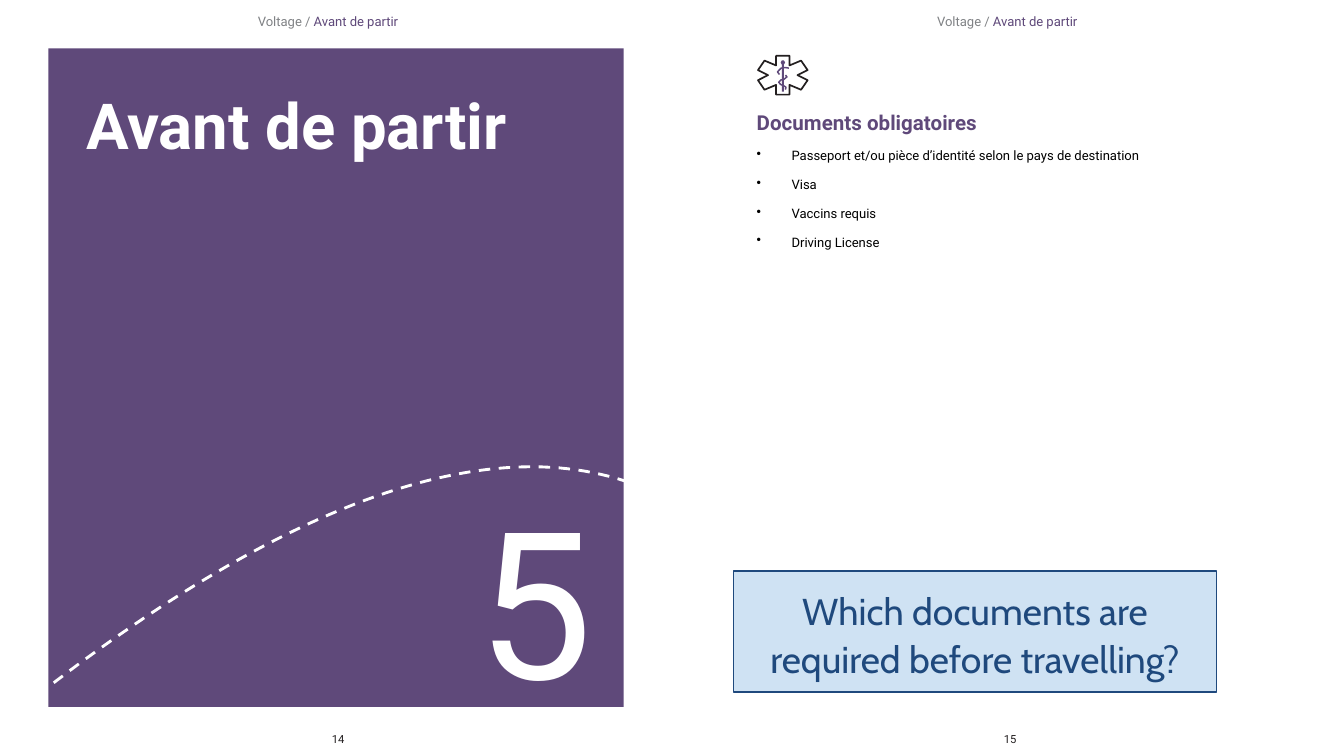
from lxml import etree
from pptx import Presentation
from pptx.dml.color import RGBColor
from pptx.enum import dml, shapes, text
from pptx.oxml.ns import qn
from pptx.util import Pt

PURPLE = RGBColor(0x5F, 0x49, 0x7A)
WHITE = RGBColor(0xFF, 0xFF, 0xFF)
BLACK = RGBColor(0x00, 0x00, 0x00)
INK = RGBColor(0x23, 0x1F, 0x20)
GREY = RGBColor(0x80, 0x82, 0x85)
NAVY = RGBColor(0x1F, 0x49, 0x7D)
PALE_BLUE = RGBColor(0xCF, 0xE2, 0xF3)

DOCUMENTS = [
    "Passeport et/ou pièce d’identité selon le pays de destination",
    "Visa",
    "Vaccins requis",
    "Driving License",
]


def style(paragraph, size, color, bold=False, name="Roboto"):
    font = paragraph.font
    font.name, font.size, font.bold = name, Pt(size), bold
    font.color.rgb = color


def add_text(page, left, top, width, height, content, size, color, bold=False, inset=0.7):
    """Add a one-paragraph text box and return its text frame."""
    box = page.shapes.add_textbox(Pt(left), Pt(top), Pt(width), Pt(height))
    frame = box.text_frame
    frame.word_wrap = True
    frame.auto_size = text.MSO_AUTO_SIZE.SHAPE_TO_FIT_TEXT
    frame.margin_left = frame.margin_right = frame.margin_bottom = 0
    frame.margin_top = Pt(inset)
    paragraph = frame.paragraphs[0]
    paragraph.text = content
    style(paragraph, size, color, bold)
    return frame


def add_bullet(frame, content):
    paragraph = frame.add_paragraph()
    paragraph.text = content
    paragraph.space_before = Pt(7)
    properties = paragraph._p.get_or_add_pPr()
    properties.set("marL", str(Pt(18.7)))
    properties.set("indent", str(-Pt(18.7)))
    bullet_color = etree.SubElement(properties, qn("a:buClr"))
    etree.SubElement(bullet_color, qn("a:srgbClr"), val=str(BLACK))
    etree.SubElement(properties, qn("a:buChar"), char="•")
    style(paragraph, 7, BLACK)


def add_outline(page, points, fill=None, line=None, width=1, closed=False):
    (start_x, start_y), *rest = [(Pt(x), Pt(y)) for x, y in points]
    builder = page.shapes.build_freeform(start_x, start_y)
    builder.add_line_segments(rest, close=closed)
    outline = builder.convert_to_shape()
    outline.shadow.inherit = False
    if fill is None:
        outline.fill.background()
    else:
        outline.fill.solid()
        outline.fill.fore_color.rgb = fill
    if line is None:
        outline.line.fill.background()
    else:
        outline.line.color.rgb = line
        outline.line.width = Pt(width)
    return outline


def quadratic_curve(start, control, end, steps=60):
    points = []
    for step in range(steps + 1):
        t = step / steps
        points.append(tuple(
            (1 - t) ** 2 * a + 2 * t * (1 - t) * b + t ** 2 * c
            for a, b, c in zip(start, control, end)))
    return points


def add_cover(page):
    cover = page.shapes.add_shape(
        shapes.MSO_SHAPE.RECTANGLE, Pt(25.9), Pt(25.9), Pt(308.2), Pt(352.8))
    cover.shadow.inherit = False
    cover.fill.solid()
    cover.fill.fore_color.rgb = PURPLE
    cover.line.fill.background()
    add_text(page, 255.6, 253.4, 63.4, 133.9, "5", 110, WHITE)
    route = add_outline(
        page, quadratic_curve((28.8, 365.8), (241.9, 203.8), (360, 268.6)),
        line=WHITE, width=1.52)
    route.line.dash_style = dml.MSO_LINE.DASH
    add_text(page, 46.1, 38.2, 234, 49, "Avant de partir", 34, WHITE, True, 7.9)


def add_header(page, left, width):
    frame = add_text(page, left, 6.5, width, 7.9, "Voltage / ", 7, GREY)
    paragraph = frame.paragraphs[0]
    paragraph.alignment = text.PP_ALIGN.CENTER
    paragraph.runs[0].font.color.rgb = GREY
    span = paragraph.add_run()
    span.text = "Avant de partir"
    span.font.color.rgb = PURPLE


def add_medical_icon(page, center_x, center_y):
    """Draw a six-armed star around a staff with a snake."""
    def place(points):
        return [(center_x + x, center_y + y) for x, y in points]

    quarter = [(3.6, -10.4), (3.6, -5.2), (9.8, -7.8), (13.3, -2.7), (7.9, 0)]
    right = quarter + [(x, -y) for x, y in quarter[-2::-1]]
    left = [(-x, y) for x, y in reversed(right)]
    add_outline(page, place(right + left), line=INK, width=0.9, closed=True)

    staff_side = [(0.5, -8), (1.2, -6.8), (0.5, -5.6), (0.5, 8.8)]
    staff = staff_side + [(-x, y) for x, y in reversed(staff_side)]
    add_outline(page, place(staff), fill=PURPLE, closed=True)

    head = [(3.2, -3.8), (1.4, -4.1), (-0.9, -3.8), (-2.9, -1.8), (-1.8, -0.4)]
    body = [(1.4, 0), (2.2, 0.9), (0.4, 2.4), (-1, 2.5), (-2.2, 3.8),
            (-1.2, 5), (0.4, 5.6), (1.7, 6.5), (1.3, 7.7)]
    for snake_part in (head, body):
        add_outline(page, place(snake_part), line=PURPLE, width=0.8)


def add_question(page):
    box = page.shapes.add_shape(
        shapes.MSO_SHAPE.RECTANGLE, Pt(393.1), Pt(306), Pt(258.5), Pt(64.8))
    box.shadow.inherit = False
    box.fill.solid()
    box.fill.fore_color.rgb = PALE_BLUE
    box.line.color.rgb = NAVY
    box.line.width = Pt(0.75)
    frame = box.text_frame
    frame.word_wrap = True
    frame.auto_size = text.MSO_AUTO_SIZE.SHAPE_TO_FIT_TEXT
    frame.vertical_anchor = text.MSO_ANCHOR.TOP
    frame.margin_left = frame.margin_right = Pt(7.2)
    frame.margin_top = frame.margin_bottom = Pt(7.2)
    paragraph = frame.paragraphs[0]
    paragraph.text = "Which documents are required before travelling?"
    paragraph.alignment = text.PP_ALIGN.CENTER
    paragraph.line_spacing = 1.08
    style(paragraph, 20, NAVY, name="Cabin")


def main():
    deck = Presentation()
    deck.slide_width, deck.slide_height = Pt(720), Pt(405)
    page = deck.slides.add_slide(deck.slide_layouts[6])

    add_cover(page)
    documents = add_text(
        page, 405.4, 58.3, 269.3, 139, "Documents obligatoires", 11, PURPLE, True)
    for document in DOCUMENTS:
        add_bullet(documents, document)
    for left, width in ((133.2, 85), (501.1, 77)):
        add_header(page, left, width)
    for left, number in ((177.8, "14"), (537.8, "15")):
        add_text(page, left, 391.7, 13, 6.5, number, 6, INK)
    add_medical_icon(page, 419.4, 40.3)
    add_question(page)

    deck.save("out.pptx")


if __name__ == "__main__":
    main()
